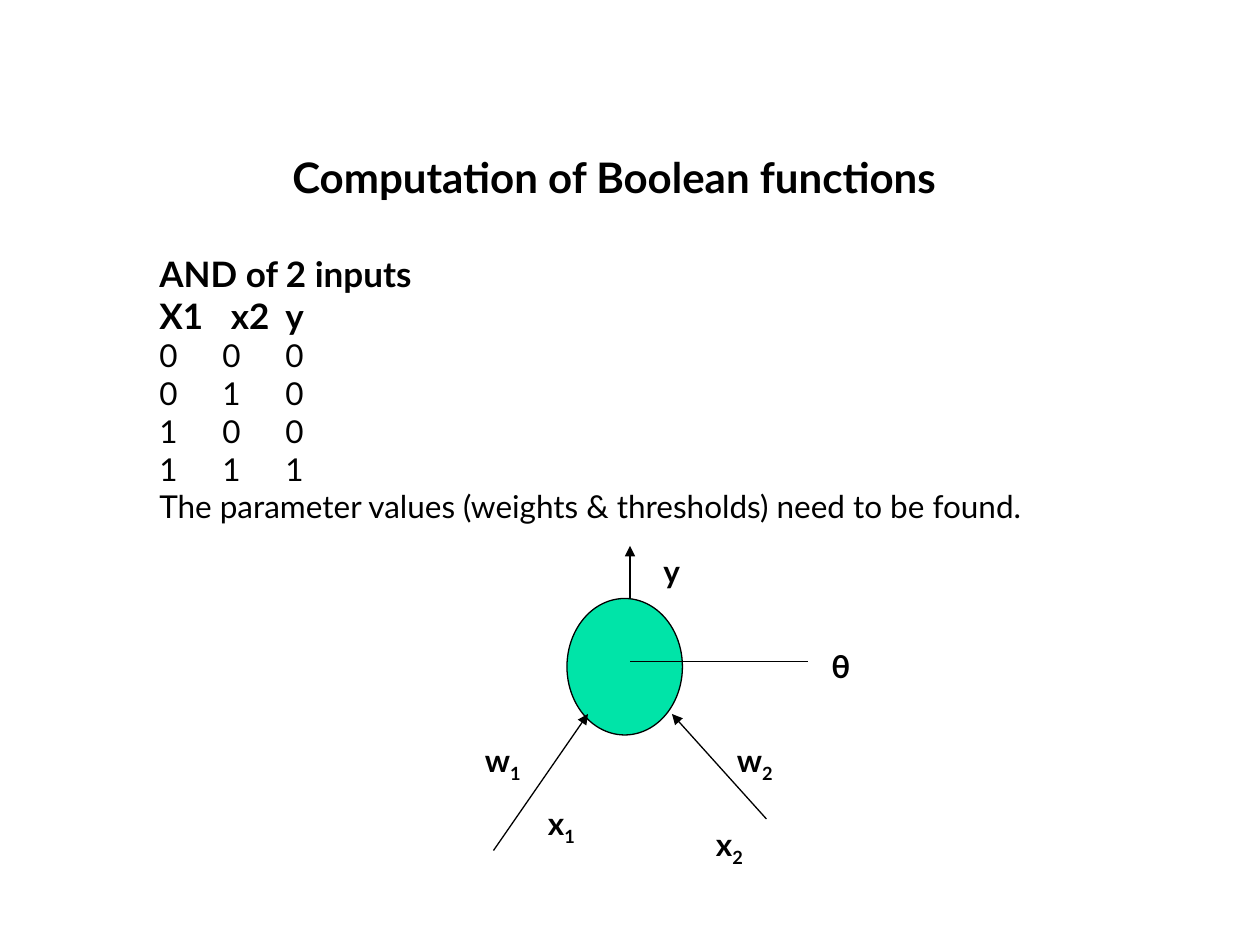
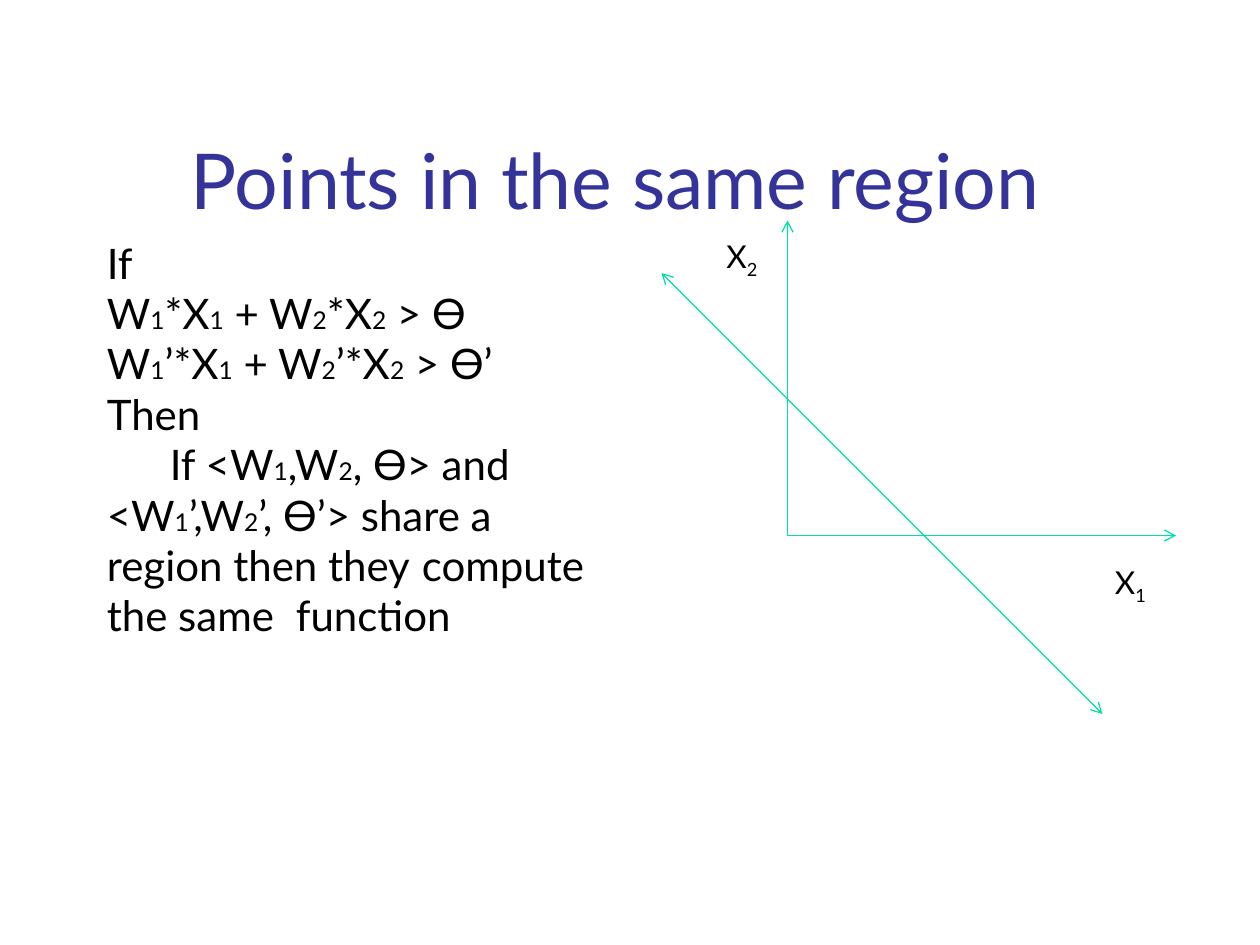
from lxml import etree
from pptx import Presentation
from pptx import util as u
from pptx.dml.color import RGBColor
from pptx.enum import shapes, text
from pptx.oxml.ns import qn

WIDTH, HEIGHT = u.Inches(10), u.Inches(7.5)
COLUMNS, ROWS = 120, 90
FONT = "Lato"
BLACK, NAVY, MINT, TEAL = "000000", "333399", "00E4A8", "00DFA4"
LABEL_SIZE, LABEL_ROWS = 18, 4.8


def color(value):
    """Turn a hex string into a colour."""
    return RGBColor.from_string(value)


def across(columns):
    """Turn grid columns into a length."""
    return round(WIDTH * columns / COLUMNS)


def down(rows):
    """Turn grid rows into a length."""
    return round(HEIGHT * rows / ROWS)


def add_box(page, left, top, width, height, wrap=True):
    """Add an empty text box given in grid units and return its frame."""
    box = page.shapes.add_textbox(across(left), down(top), across(width), down(height))
    frame = box.text_frame
    frame.word_wrap = wrap
    return frame


def style(span, size, bold=False, ink=BLACK):
    """Format one run."""
    span.font.name = FONT
    span.font.size = u.Pt(size)
    span.font.bold = bold
    span.font.color.rgb = color(ink)


def write(para, words, size, bold=False, ink=BLACK, index_size=None):
    """Fill a paragraph; the character after each underscore is an index."""
    plain, *parts = words.split("_")
    pieces = [(plain, False)]
    for part in parts:
        pieces += [(part[0], True), (part[1:], False)]
    for piece, is_index in pieces:
        if not piece:
            continue
        span = para.add_run()
        span.text = piece
        style(span, index_size if is_index and index_size else size, bold, ink)
        if is_index and not index_size:
            span.font._element.set("baseline", "-25000")


def write_lines(frame, lines, **options):
    """Write (words, size, bold) lines, one paragraph each."""
    for number, (words, size, bold) in enumerate(lines):
        para = frame.add_paragraph() if number else frame.paragraphs[0]
        write(para, words, size, bold, **options)


def add_label(page, words, left, top, width, bold=False, wrap=False):
    """Add a short diagram label."""
    frame = add_box(page, left, top, width, LABEL_ROWS, wrap)
    frame.auto_size = text.MSO_AUTO_SIZE.SHAPE_TO_FIT_TEXT
    write(frame.paragraphs[0], words, LABEL_SIZE, bold)


def add_line(page, start, end, ink, head=None, tail=None):
    """Join two grid points, with optional arrowheads at start and end."""
    line = page.shapes.add_connector(
        shapes.MSO_CONNECTOR.STRAIGHT,
        across(start[0]), down(start[1]), across(end[0]), down(end[1]))
    line.line.color.rgb = color(ink)
    line.line.width = u.Pt(0.75)
    outline = line.line._get_or_add_ln()
    for tag, kind in (("a:headEnd", head), ("a:tailEnd", tail)):
        if kind:
            etree.SubElement(outline, qn(tag), type=kind)
    etree.SubElement(line._element.spPr, qn("a:effectLst"))


def add_truth_table(page, left, top):
    """Write the heading and the tabbed truth table of AND."""
    frame = add_box(page, left, top, 89, 36.8)
    cases = [(a, b, a & b) for a in (0, 1) for b in (0, 1)]
    lines = [("Computation of Boolean functions", 24, True),
             ("AND of 2 inputs", 20, True),
             ("X1\t x2 \ty", 20, True)]
    lines += [(f"{a} \t{b}\t{y}", 18, False) for a, b, y in cases]
    lines.append(("The parameter values (weights & thresholds) need to be found.", 18, False))
    write_lines(frame, lines)
    heading = frame.paragraphs[0]
    heading.alignment = text.PP_ALIGN.CENTER
    heading.space_after = u.Pt(29)


def add_neuron(page, left, top):
    """Draw a two-input threshold neuron."""
    cell = page.shapes.add_shape(
        shapes.MSO_SHAPE.OVAL, across(left + 9), down(top + 5), across(11), down(13))
    cell.shadow.inherit = False
    cell.fill.solid()
    cell.fill.fore_color.rgb = color(MINT)
    cell.line.color.rgb = color(BLACK)
    cell.line.width = u.Pt(0.75)
    wires = [((2, 29), (11, 16), "triangle"), ((28, 26), (19, 16), "triangle"),
             ((15, 5), (15, 0), "triangle"), ((15, 11), (32, 11), None)]
    for (x1, y1), (x2, y2), tip in wires:
        add_line(page, (left + x1, top + y1), (left + x2, top + y2), BLACK, tail=tip)
    labels = [("y", 17, 0, 4.1), ("w_1", 0, 18, 5.9), ("w_2", 24, 18, 5.9),
              ("x_1", 6, 24, 5.2), ("x_2", 22, 26, 5.2), ("θ", 33, 9, 4.1)]
    for words, x, y, width in labels:
        add_label(page, words, left + x, top + y, width, bold=True)


def add_plane(page, left, top):
    """Draw the input plane with its axes and separating line."""
    arrows = [((12, 30), (12, 0), None), ((12, 30), (49, 30), None),
              ((0, 5), (42, 47), "arrow")]
    for (x1, y1), (x2, y2), head in arrows:
        add_line(page, (left + x1, top + y1), (left + x2, top + y2), TEAL, head, "arrow")
    for words, x, y in (("X_1", 42, 32), ("X_2", 5, 1)):
        add_label(page, words, left + x, top + y, 7, wrap=True)


def add_argument(page, left, top):
    """Write the condition under which two neurons agree."""
    frame = add_box(page, left, top, 53, 44.9)
    lines = ["If",
             "W_1*X_1 + W_2*X_2 > Ѳ",
             "W_1’*X_1 + W_2’*X_2 > Ѳ’",
             "Then",
             "\tIf <W_1,W_2, Ѳ> and \t<W_1’,W_2’, Ѳ’> share a "
             "\tregion then they \tcompute the same \tfunction"]
    write_lines(frame, [(words, 24, False) for words in lines], index_size=14)


def add_title(page, words):
    """Write the large slide title on the bottom of its band."""
    frame = add_box(page, 15.1, 2.8, 102.2, 19.2)
    frame.vertical_anchor = text.MSO_ANCHOR.BOTTOM
    write(frame.paragraphs[0], words, 44, ink=NAVY)


def build_boolean_page(page):
    """Compose the slide on computing AND."""
    add_truth_table(page, 14, 13.8)
    add_neuron(page, 45, 52)


def build_region_page(page):
    """Compose the slide on points in one region."""
    add_title(page, " Points in the same region")
    add_plane(page, 63, 21)
    add_argument(page, 9, 22)


def main():
    """Build and save the deck."""
    deck = Presentation()
    deck.slide_width, deck.slide_height = WIDTH, HEIGHT
    for build in (build_boolean_page, build_region_page):
        build(deck.slides.add_slide(deck.slide_layouts[6]))
    deck.save("out.pptx")


if __name__ == "__main__":
    main()
